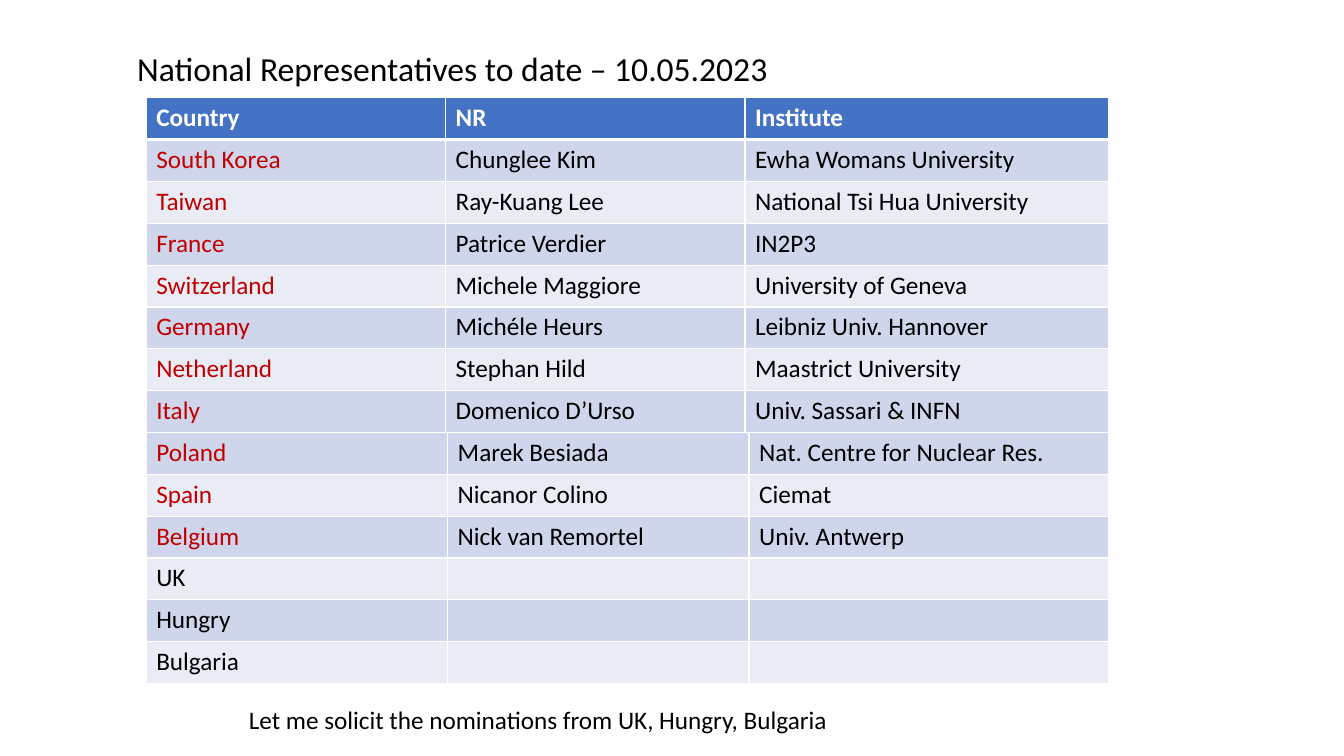
from pptx import Presentation
from pptx.dml.color import RGBColor
from pptx.enum.text import MSO_ANCHOR, MSO_AUTO_SIZE, PP_ALIGN
from pptx.oxml import parse_xml
from pptx.oxml.ns import nsdecls
from pptx.util import Emu, Pt

EMU_PER_PX = 9144  # 100 px to the inch
TITLE_ONLY = 5

BLACK = RGBColor(0x00, 0x00, 0x00)
WHITE = RGBColor(0xFF, 0xFF, 0xFF)
RED = RGBColor(0xC0, 0x00, 0x00)
HEADER_BLUE = RGBColor(0x44, 0x72, 0xC4)
BANDS = (RGBColor(0xCF, 0xD5, 0xEA), RGBColor(0xE9, 0xEB, 0xF5))

HEADINGS = ("Country", "NR", "Institute")
FIRST_REPRESENTATIVES = [
    ("South Korea", "Chunglee Kim", "Ewha Womans University"),
    ("Taiwan", "Ray-Kuang Lee", "National Tsi Hua University"),
    ("France", "Patrice Verdier", "IN2P3"),
    ("Switzerland", "Michele Maggiore", "University of Geneva"),
    ("Germany", "Michéle Heurs", "Leibniz Univ. Hannover"),
    ("Netherland", "Stephan Hild", "Maastrict University"),
    ("Italy", "Domenico D’Urso", "Univ. Sassari & INFN"),
]
MORE_REPRESENTATIVES = [
    ("Poland", "Marek Besiada", "Nat. Centre for Nuclear Res."),
    ("Spain", "Nicanor Colino", "Ciemat"),
    ("Belgium", "Nick van Remortel", "Univ. Antwerp"),
    ("UK", "", ""),
    ("Hungry", "", ""),
    ("Bulgaria", "", ""),
]


def px(length):
    return Emu(length * EMU_PER_PX)


class SlideBuilder:
    font_name = "Calibri"
    body_size = 18

    def __init__(self, slide):
        self.slide = slide

    def set_font(self, paragraph, size, color, bold=False):
        font = paragraph.font
        font.name, font.size, font.bold = self.font_name, Pt(size), bold
        font.color.rgb = color

    def set_text(self, shape, text, size):
        frame = shape.text_frame
        frame.text = text
        frame.word_wrap = False
        frame.auto_size = MSO_AUTO_SIZE.NONE
        frame.vertical_anchor = MSO_ANCHOR.TOP
        frame.paragraphs[0].alignment = PP_ALIGN.LEFT
        self.set_font(frame.paragraphs[0], size, BLACK)

    def title(self, text, left, top, width, height):
        title = self.slide.shapes.title
        title.left, title.top = px(left), px(top)
        title.width, title.height = px(width), px(height)
        self.set_text(title, text, 24)

    def note(self, text, left, top, width, height):
        note = self.slide.shapes.add_textbox(px(left), px(top), px(width), px(height))
        self.set_text(note, text, self.body_size)

    def borders(self, cell, top, bottom):
        properties = cell._tc.get_or_add_tcPr()
        for side, points in (("L", 1), ("R", 1), ("T", top), ("B", bottom)):
            properties.append(parse_xml(
                f'<a:ln{side} {nsdecls("a")} w="{Pt(points)}"><a:solidFill>'
                f'<a:srgbClr val="{WHITE}"/></a:solidFill></a:ln{side}>'))

    def cell(self, cell, text, fill, color, bold=False, top=1, bottom=1):
        self.borders(cell, top, bottom)
        cell.fill.solid()
        cell.fill.fore_color.rgb = fill
        cell.text = text
        self.set_font(cell.text_frame.paragraphs[0], self.body_size, color, bold)

    def table(self, records, left, top, widths, height, headings=None):
        header_rows = 1 if headings else 0
        table = self.slide.shapes.add_table(
            len(records) + header_rows, len(widths),
            px(left), px(top), px(sum(widths)), px(height)).table
        table.first_row = bool(headings)
        table.horz_banding = False
        for column, width in zip(table.columns, widths):
            column.width = px(width)

        for column, heading in enumerate(headings or ()):
            self.cell(table.cell(0, column), heading, HEADER_BLUE, WHITE, bold=True, bottom=3)

        for index, record in enumerate(records):
            country_color = RED if record[1] else BLACK  # red once a representative is named
            top_border = 3 if headings and index == 0 else 1
            for column, text in enumerate(record):
                self.cell(table.cell(index + header_rows, column), text, BANDS[index % 2],
                          BLACK if column else country_color, top=top_border)


def main():
    presentation = Presentation()
    presentation.slide_width, presentation.slide_height = px(1333), px(750)
    layout = presentation.slide_layouts[TITLE_ONLY]
    builder = SlideBuilder(presentation.slides.add_slide(layout))

    # Title
    builder.title("National Representatives to date – 10.05.2023", 126, 43, 651, 81)

    # Representatives, with the headings
    builder.table(FIRST_REPRESENTATIVES, 145, 97, (297, 297, 361), 332, HEADINGS)

    # Request for the missing nominations
    builder.note("Let me solicit the nominations from UK, Hungry, Bulgaria", 237, 694, 601, 40)

    # Remaining countries, directly below
    builder.table(MORE_REPRESENTATIVES, 145, 429, (299, 299, 357), 249)

    presentation.save("out.pptx")


if __name__ == "__main__":
    main()
